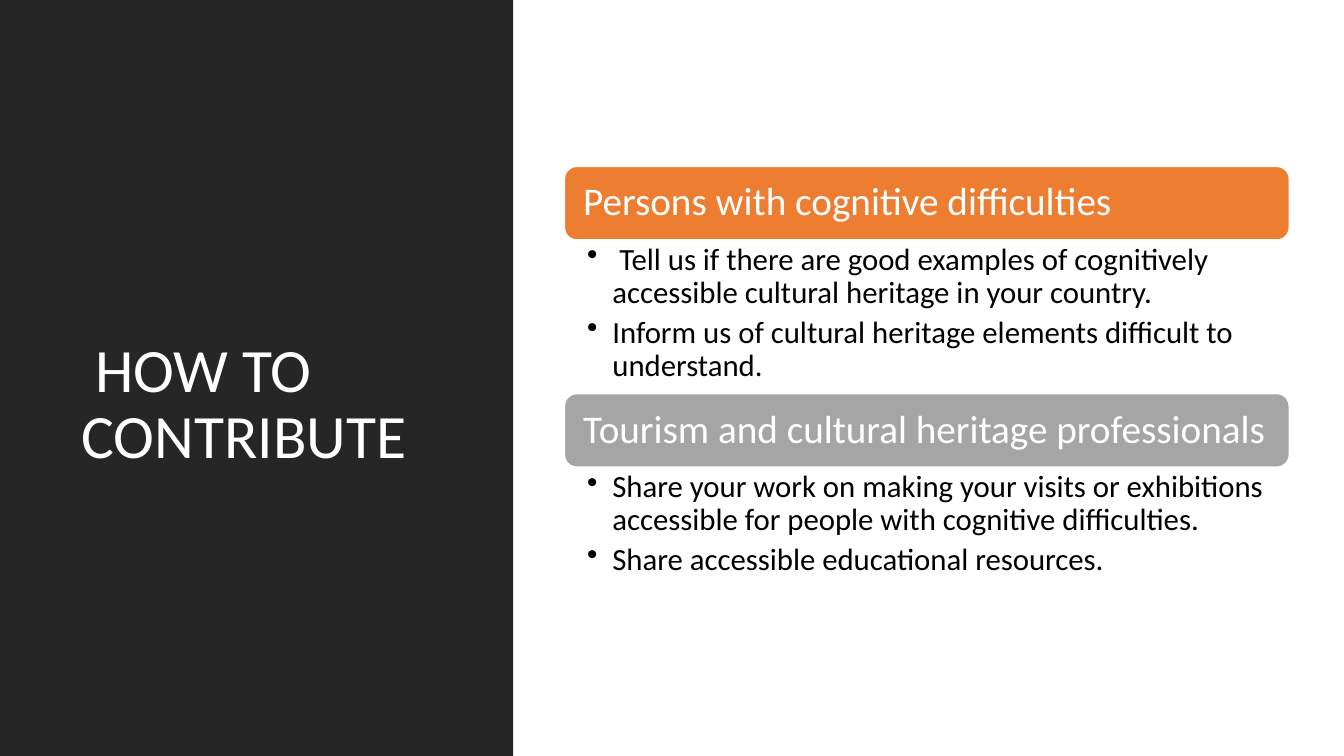
from dataclasses import dataclass

from lxml import etree
from pptx import Presentation
from pptx.dml.color import RGBColor
from pptx.enum import shapes, text
from pptx.oxml import ns
from pptx.shapes.autoshape import Shape
from pptx.slide import Slide
from pptx.util import Pt

COLORS = {
    "panel": "262626",
    "orange": "ED7D31",
    "gray": "A5A5A5",
    "white": "FFFFFF",
    "black": "000000",
}
FONT = "Calibri"
SECTION_LEFT, SECTION_WIDTH, SECTION_TOP = 403.2, 517.7, 118.9
HEADING_HEIGHT = 52.5
BULLET_SIZE, BULLET_INDENT = 22, 18


@dataclass(frozen=True)
class Section:
    heading: str
    color: str
    bullets: tuple[str, ...]
    body_height: float


SECTIONS = (
    Section(
        "Persons with cognitive difficulties",
        "orange",
        (
            " Tell us if there are good examples of cognitively accessible "
            "cultural heritage in your country.",
            "Inform us of cultural heritage elements difficult to understand.",
        ),
        109.8,
    ),
    Section(
        "Tourism and cultural heritage professionals",
        "gray",
        (
            "Share your work on making your visits or exhibitions accessible "
            "for people with cognitive difficulties.",
            "Share accessible educational resources.",
        ),
        84.2,
    ),
)


def color(name: str) -> RGBColor:
    return RGBColor.from_string(COLORS[name])


def add_block(slide: Slide, kind: shapes.MSO_SHAPE, left: float, top: float,
              width: float, height: float, fill: str) -> Shape:
    shape = slide.shapes.add_shape(kind, Pt(left), Pt(top), Pt(width), Pt(height))
    shape.shadow.inherit = False
    shape.fill.solid()
    shape.fill.fore_color.rgb = color(fill)
    shape.line.fill.background()
    return shape


def add_text_box(slide: Slide, left: float, top: float, width: float,
                 height: float) -> Shape:
    return slide.shapes.add_textbox(Pt(left), Pt(top), Pt(width), Pt(height))


def set_frame(shape: Shape, anchor: text.MSO_ANCHOR, side: float, edge: float) -> None:
    """Wrap the text, anchor it and set side and top/bottom insets."""
    frame = shape.text_frame
    frame.word_wrap = True
    frame.vertical_anchor = anchor
    frame.margin_left = frame.margin_right = Pt(side)
    frame.margin_top = frame.margin_bottom = Pt(edge)


def write_lines(shape: Shape, lines: tuple[str, ...], size: float, ink: str,
                bulleted: bool = False) -> None:
    frame = shape.text_frame
    for index, line in enumerate(lines):
        paragraph = frame.add_paragraph() if index else frame.paragraphs[0]
        paragraph.alignment = text.PP_ALIGN.LEFT
        paragraph.line_spacing = 0.9
        if bulleted:
            paragraph.level = 1
            paragraph.space_after = Pt(0.2 * size)
            properties = paragraph._p.get_or_add_pPr()
            properties.set("marL", str(Pt(BULLET_INDENT)))
            properties.set("indent", str(-Pt(BULLET_INDENT)))
            etree.SubElement(properties, ns.qn("a:buChar"), char="•")
        run = paragraph.add_run()
        run.text = line
        run.font.name = FONT
        run.font.size = Pt(size)
        run.font.color.rgb = color(ink)


def add_section(slide: Slide, section: Section, top: float) -> float:
    """Draw heading and bullets; return the bottom of the section."""
    heading = add_block(slide, shapes.MSO_SHAPE.ROUNDED_RECTANGLE, SECTION_LEFT, top,
                        SECTION_WIDTH, HEADING_HEIGHT, section.color)
    heading.line.color.rgb = color("white")
    heading.line.width = Pt(1)
    set_frame(heading, text.MSO_ANCHOR.MIDDLE, 10.8, 8.6)
    write_lines(heading, (section.heading,), 28, "white")

    body_top = top + HEADING_HEIGHT
    body = add_text_box(slide, SECTION_LEFT, body_top, SECTION_WIDTH, section.body_height)
    set_frame(body, text.MSO_ANCHOR.TOP, 16.2, 2.8)
    write_lines(body, section.bullets, BULLET_SIZE, "black", bulleted=True)
    return body_top + section.body_height


def main() -> None:
    presentation = Presentation()
    presentation.slide_width, presentation.slide_height = Pt(960), Pt(540)
    slide = presentation.slides.add_slide(presentation.slide_layouts[6])
    slide.background.fill.solid()
    slide.background.fill.fore_color.rgb = color("white")

    add_block(slide, shapes.MSO_SHAPE.RECTANGLE, 0, 0, 366.5, 540, "panel")
    title = add_text_box(slide, 51.1, 50.4, 265.7, 290.2)
    set_frame(title, text.MSO_ANCHOR.BOTTOM, 7.2, 3.6)
    write_lines(title, (" HOW TO CONTRIBUTE",), 44, "white")

    top = SECTION_TOP
    for section in SECTIONS:
        top = add_section(slide, section, top)

    presentation.save("out.pptx")


if __name__ == "__main__":
    main()
